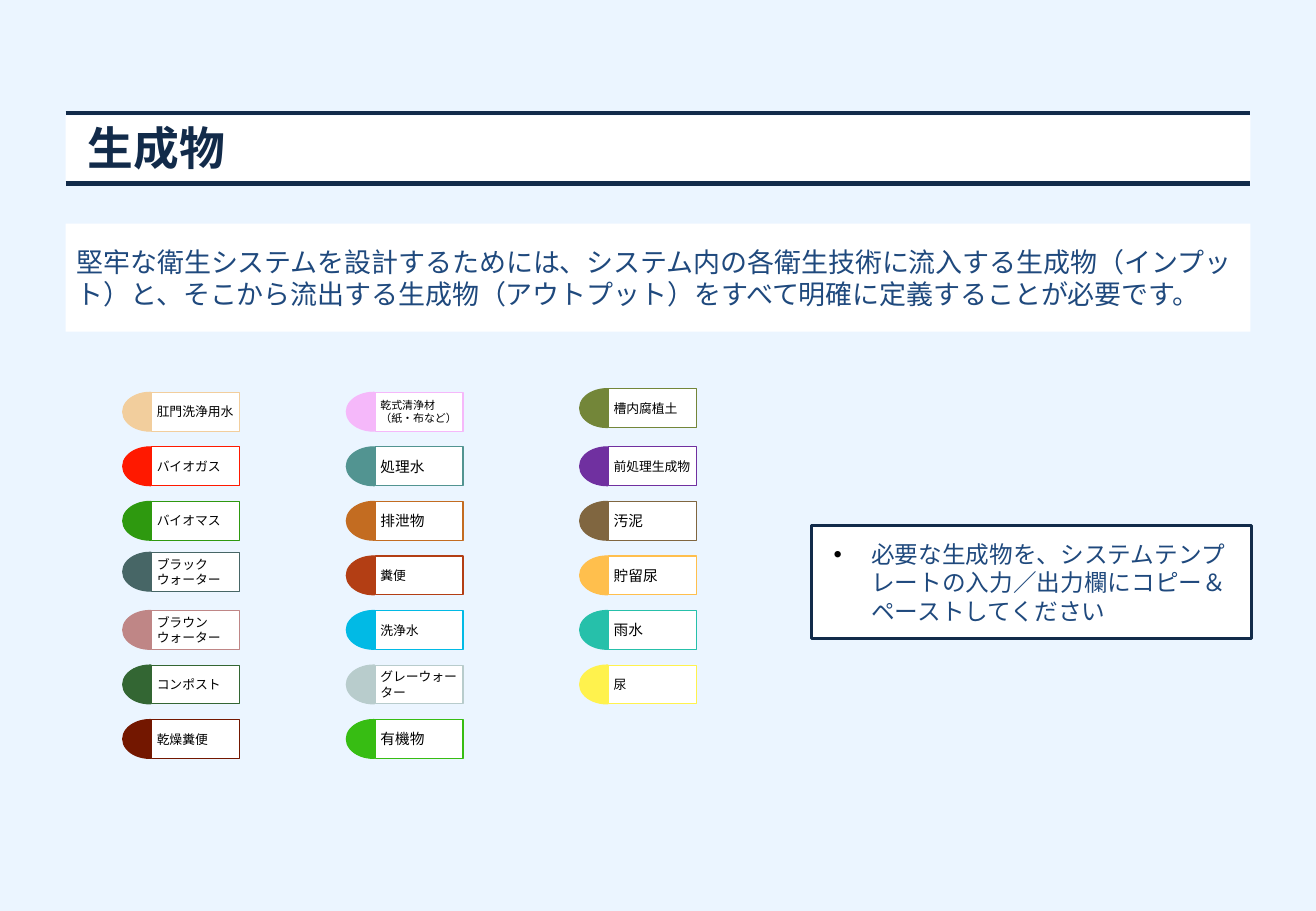
import pptx
import pptx.util
import pptx.dml.color
import pptx.enum.shapes
import pptx.enum.text
import pptx.oxml.ns
from lxml import etree

# Content
TITLE = "生成物"
INTRO = ("堅牢な衛生システムを設計するためには、システム内の各衛生技術に流入する生成物（インプット）と、"
         "そこから流出する生成物（アウトプット）をすべて明確に定義することが必要です。")
NOTE = "必要な生成物を、システムテンプレートの入力／出力欄にコピー＆ペーストしてください"

# Columns of products: label, colour, size, font
PRODUCTS = [
    [("肛門洗浄用水", "F2CE9D", 7.6, "Calibri"),
     ("バイオガス", "FF1900", 7.6, "Calibri"),
     ("バイオマス", "2E990F", 7.6, "Calibri"),
     ("ブラックウォーター", "476666", 7.6, "Calibri"),
     ("ブラウンウォーター", "BF8686", 7.6, "Calibri"),
     ("コンポスト", "336633", 7.6, "Calibri"),
     ("乾燥糞便", "731700", 7.6, "Calibri")],
    [("乾式清浄材（紙・布など）", "F5B8FA", 6.5, "Calibri"),
     ("処理水", "529491", 8.7, "Arial"),
     ("排泄物", "C36C21", 8.7, "Arial"),
     ("糞便", "B33E14", 7.6, "Calibri"),
     ("洗浄水", "01BAE5", 7.6, "Calibri"),
     ("グレーウォーター", "B8CCCC", 7.6, "Calibri"),
     ("有機物", "37BD13", 8.7, "Arial")],
    [("槽内腐植土", "738639", 7.6, "Calibri"),
     ("前処理生成物", "7030A0", 7.6, "Arial"),
     ("汚泥", "806640", 8.7, "Arial"),
     ("貯留尿", "FFBF4D", 8.7, "Arial"),
     ("雨水", "26C0AA", 8.7, "Arial"),
     ("尿", "FFF24D", 7.6, "Calibri")],
]
NUDGES = {"ブラックウォーター": -0.03, "槽内腐植土": -0.03}

# Grid and colours
WIDTH, HEIGHT = 10.83, 7.5
MARGIN, BODY_W = 0.54, 9.75
COLUMNS = [1.01, 2.85, 4.77]
TOP, PITCH = 3.23, 0.449
CAP_W, LABEL_DX, LABEL_W, TAG_H = 0.45, 0.24, 0.72, 0.32
NAVY, BLUE, WHITE = "122B4A", "1F497D", "FFFFFF"

MSO = pptx.enum.shapes.MSO_SHAPE
inch = pptx.util.Inches

prs = pptx.Presentation()
prs.slide_width, prs.slide_height = inch(WIDTH), inch(HEIGHT)
s = prs.slides.add_slide(prs.slide_layouts[6])


def rgb(value):
    return pptx.dml.color.RGBColor.from_string(value)


def add_box(kind, x, y, w, h, fill, line=None, weight=0.65):
    sp = s.shapes.add_shape(kind, inch(x), inch(y), inch(w), inch(h))
    sp.shadow.inherit = False
    sp.fill.solid()
    sp.fill.fore_color.rgb = rgb(fill)
    if line:
        sp.line.color.rgb = rgb(line)
        sp.line.width = pptx.util.Pt(weight)
    else:
        sp.line.fill.background()
    return sp


def write(sp, text, size, color, font="Arial", bold=False,
          insets=(0.09, 0.05, 0.09, 0.05), indent=(0, 0), bullet=None):
    tf = sp.text_frame
    tf.word_wrap = True
    tf.vertical_anchor = pptx.enum.text.MSO_ANCHOR.MIDDLE
    tf.margin_left, tf.margin_top, tf.margin_right, tf.margin_bottom = map(inch, insets)
    p = tf.paragraphs[0]
    p.alignment = pptx.enum.text.PP_ALIGN.LEFT
    pPr = p._p.get_or_add_pPr()
    pPr.set("marL", str(inch(indent[0])))
    pPr.set("indent", str(inch(indent[1])))
    if bullet:
        qn = pptx.oxml.ns.qn
        clr = etree.SubElement(pPr, qn("a:buClr"))
        etree.SubElement(clr, qn("a:srgbClr"), val="000000")
        etree.SubElement(pPr, qn("a:buFont"), typeface="Arial")
        etree.SubElement(pPr, qn("a:buChar"), char=bullet)
    r = p.add_run()
    r.text = text
    r.font.size = pptx.util.Pt(size)
    r.font.name = font
    r.font.bold = bold
    r.font.color.rgb = rgb(color)


def add_rule(y):
    c = s.shapes.add_connector(pptx.enum.shapes.MSO_CONNECTOR.STRAIGHT,
                               inch(MARGIN), inch(y), inch(MARGIN + BODY_W), inch(y))
    c.line.color.rgb = rgb(NAVY)
    c.line.width = pptx.util.Pt(2.6)
    etree.SubElement(c._element.spPr, pptx.oxml.ns.qn("a:effectLst"))


# Background
s.background.fill.solid()
s.background.fill.fore_color.rgb = rgb("EBF5FF")

# Product tags: label box with a rounded cap on its left
for x, column in zip(COLUMNS, PRODUCTS):
    for row, (label, color, size, font) in enumerate(column):
        y = TOP + row * PITCH + NUDGES.get(label, 0)
        box = add_box(MSO.RECTANGLE, x + LABEL_DX, y, LABEL_W, TAG_H, WHITE, color)
        write(box, label, size, "000000", font, insets=(0.04, 0.05, 0.04, 0.05))
        cap = add_box(MSO.CHORD, x, y, CAP_W, TAG_H, color, color)
        cap.adjustments[0], cap.adjustments[1] = 52.44, 163.874

# Introduction
write(add_box(MSO.RECTANGLE, MARGIN, 1.84, BODY_W, 0.89, WHITE), INTRO, 16, BLUE)

# Title between two rules
write(add_box(MSO.RECTANGLE, MARGIN, 0.95, BODY_W, 0.56, WHITE), TITLE, 27.1, NAVY,
      bold=True, insets=(0.09, 0, 0.09, 0.04), indent=(0.09, 0))
for y in (0.93, 1.51):
    add_rule(y)

# Instruction
note = add_box(MSO.FLOWCHART_PROCESS, 6.68, 4.33, 3.62, 0.93, WHITE, NAVY, 1.73)
write(note, NOTE, 14, BLUE, indent=(0.4, -0.31), bullet="•")

prs.save("out.pptx")
